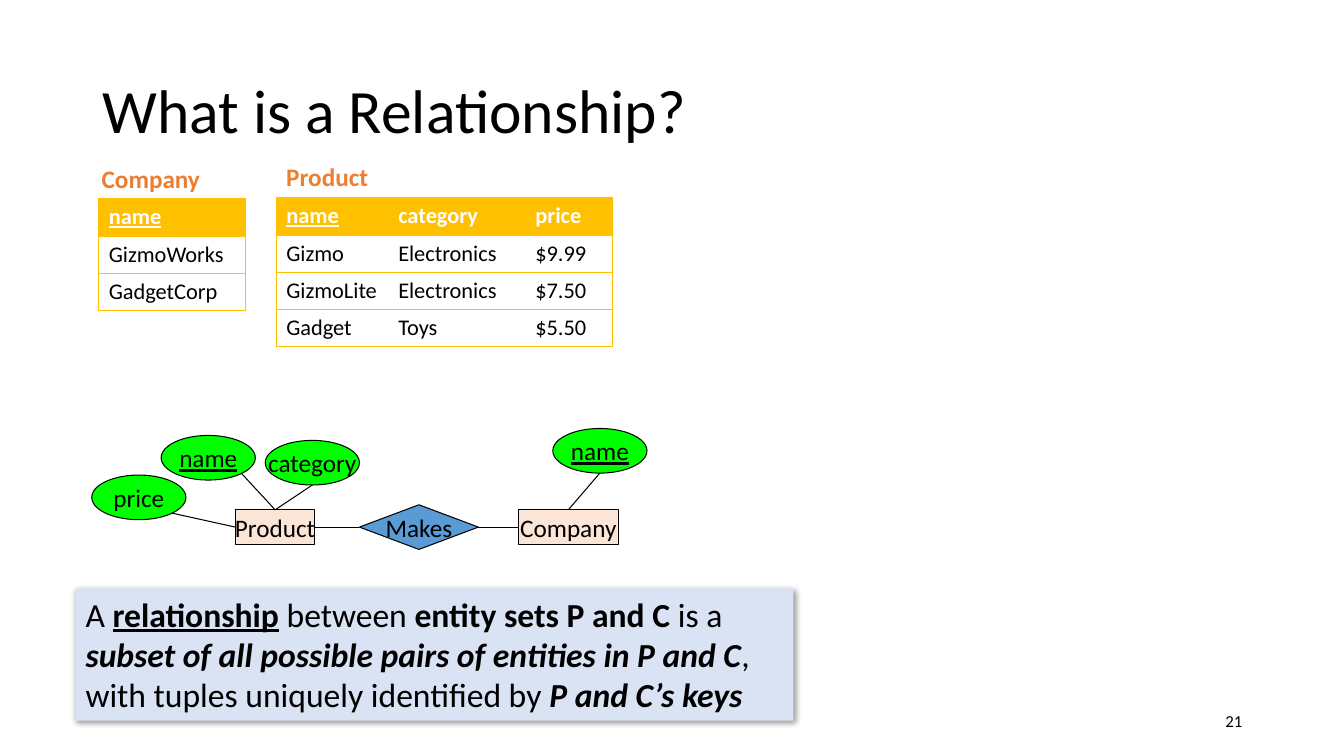
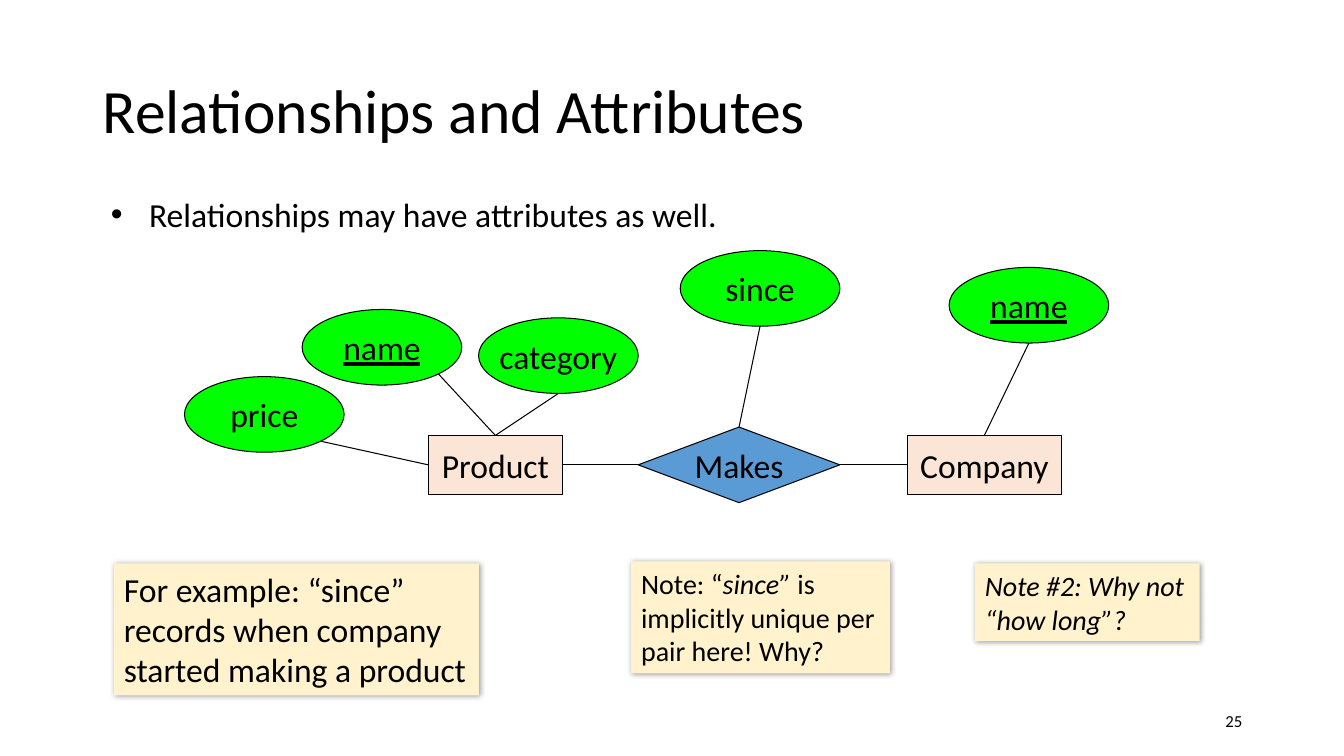
from lxml import etree
from pptx import Presentation
from pptx.dml.color import RGBColor
from pptx.enum.shapes import MSO_CONNECTOR, MSO_SHAPE
from pptx.enum.text import MSO_ANCHOR, PP_ALIGN
from pptx.oxml.ns import qn
from pptx.util import Inches, Pt

RECT, OVAL, DIAMOND = MSO_SHAPE.RECTANGLE, MSO_SHAPE.OVAL, MSO_SHAPE.DIAMOND
STRAIGHT = MSO_CONNECTOR.STRAIGHT
LEFT, CENTER, RIGHT = PP_ALIGN.LEFT, PP_ALIGN.CENTER, PP_ALIGN.RIGHT
TOP, MIDDLE = MSO_ANCHOR.TOP, MSO_ANCHOR.MIDDLE

FONT = "Calibri"
COLORS = {
    "text": "000000", "header_text": "FFFFFF", "label": "ED7D31", "table": "FFC000",
    "attribute": "00FF00", "entity": "FBE5D6", "relation": "5B9BD5",
    "definition": "DAE3F3", "note": "FFF2CC",
}
BOLD, ITALIC, UNDERLINE = {"bold": True}, {"italic": True}, {"underline": True}
ROW_H = 0.37
# Points on a shape's box, as shares of its width and height
TOP_MID, BOTTOM_MID, LEFT_MID, RIGHT_MID = (0.5, 0), (0.5, 1), (0, 0.5), (1, 0.5)
OVAL_LOW_RIGHT = (0.854, 0.854)


def rgb(name):
    return RGBColor.from_string(COLORS[name])


def inches(*values):
    return [Inches(v) for v in values]


def write(tf, runs, size, color="text", align=LEFT, anchor=TOP, wrap=True):
    """Fill a text frame with one paragraph; runs are (text, format) pairs."""
    tf.word_wrap, tf.vertical_anchor = wrap, anchor
    p = tf.paragraphs[0]
    p.alignment = align
    for text, fmt in runs:
        r = p.add_run()
        r.text = text
        r.font.color.rgb = rgb(color)
        for key, value in {"name": FONT, "size": Pt(size), **fmt}.items():
            setattr(r.font, key, value)
    return p


def add_text(slide, box, runs, size, **style):
    return write(slide.shapes.add_textbox(*inches(*box)).text_frame, runs, size, **style)


def add_filled(slide, kind, box, fill):
    sp = slide.shapes.add_shape(kind, *inches(*box))
    sp.shadow.inherit = False
    sp.fill.solid()
    sp.fill.fore_color.rgb = rgb(fill)
    return sp


def add_note(slide, box, runs, size, fill="note"):
    """A borderless text panel with a soft shadow."""
    sp = add_filled(slide, RECT, box, fill)
    sp.line.fill.background()
    effects = sp._element.spPr.find(qn("a:effectLst"))
    shadow = etree.SubElement(effects, qn("a:outerShdw"), blurRad=str(Pt(4)),
                              dist=str(Pt(1)), dir="2700000", algn="tl", rotWithShape="0")
    color = etree.SubElement(shadow, qn("a:srgbClr"), val=COLORS["text"])
    etree.SubElement(color, qn("a:alpha"), val="40000")
    write(sp.text_frame, runs, size)


def set_borders(cell, sides):
    tc_pr = cell._tc.get_or_add_tcPr()
    for side in "LRTB":
        ln = etree.SubElement(tc_pr, qn(f"a:ln{side}"), w=str(Pt(0.5)))
        if side in sides:
            fill = etree.SubElement(ln, qn("a:solidFill"))
            etree.SubElement(fill, qn("a:srgbClr"), val=COLORS["table"])
        else:
            etree.SubElement(ln, qn("a:noFill"))


def add_data_table(slide, left, top, widths, rows):
    """A table with a filled header, whose first column is the key."""
    box = inches(left, top, sum(widths), ROW_H * len(rows))
    table = slide.shapes.add_table(len(rows), len(widths), *box).table
    table.horz_banding = False
    for col, width in zip(table.columns, widths):
        col.width = Inches(width)
    for i, row in enumerate(rows):
        table.rows[i].height = Inches(ROW_H)
        for j, text in enumerate(row):
            cell = table.cell(i, j)
            set_borders(cell, "TB" + "L" * (j == 0) + "R" * (j == len(row) - 1))
            if i == 0:
                cell.fill.solid()
                cell.fill.fore_color.rgb = rgb("table")
                fmt, color = {"bold": True, "underline": j == 0}, "header_text"
            else:
                cell.fill.background()
                fmt, color = {"bold": False}, "text"
            write(cell.text_frame, [(text, fmt)], 16, color)


def add_line(slide, start, start_share, end, end_share):
    """Join two shapes at the given shares of their boxes."""
    points = []
    for sp, (fx, fy) in ((start, start_share), (end, end_share)):
        points += [int(sp.left + fx * sp.width), int(sp.top + fy * sp.height)]
    cxn = slide.shapes.add_connector(STRAIGHT, *points)
    cxn.line.color.rgb = rgb("text")
    cxn.line.width = Pt(0.75)
    etree.SubElement(cxn._element.spPr, qn("a:effectLst"))


def add_er_diagram(slide, left, top, cell, size, company_w, company_name, since=None):
    """Place the diagram on a square grid; company_name and since are (column, row)."""
    def node(kind, text, col, row, w, h, fill, fmt=None):
        box = (left + col * cell, top + row * cell, w * cell, h * cell)
        sp = add_filled(slide, kind, box, fill)
        sp.line.color.rgb = rgb("text")
        sp.line.width = Pt(0.75)
        tf = sp.text_frame
        for side in ("left", "right", "top", "bottom"):
            setattr(tf, f"margin_{side}", 0)
        write(tf, [(text, fmt or {})], size, align=CENTER, anchor=MIDDLE, wrap=False)
        return sp

    def attribute(text, col, row, fmt=None):
        return node(OVAL, text, col, row, 19, 9, "attribute", fmt)

    makes = node(DIAMOND, "Makes", 54, 14, 24, 9, "relation")
    product = node(RECT, "Product", 29, 15, 16, 7, "entity")
    company = node(RECT, "Company", 86, 15, company_w, 7, "entity")
    links = [
        (attribute("price", 0, 8), OVAL_LOW_RIGHT, product, LEFT_MID),
        (attribute("name", 14, 0, UNDERLINE), OVAL_LOW_RIGHT, product, TOP_MID),
        (attribute("category", 35, 1), BOTTOM_MID, product, TOP_MID),
        (attribute("name", *company_name, UNDERLINE), BOTTOM_MID, company, TOP_MID),
        (product, RIGHT_MID, makes, LEFT_MID),
        (makes, RIGHT_MID, company, LEFT_MID),
    ]
    if since:
        links.append((attribute("since", *since), BOTTOM_MID, makes, TOP_MID))
    for link in links:
        add_line(slide, *link)


def add_titled_slide(prs, title, number):
    slide = prs.slides.add_slide(prs.slide_layouts[5])
    sp = slide.shapes.title
    sp.left, sp.top, sp.width, sp.height = inches(0.92, 0.4, 11.5, 1.45)
    write(sp.text_frame, [(title, {})], 44, anchor=MIDDLE).line_spacing = 0.9
    add_text(slide, (9.42, 6.95, 3, 0.4), [(number, {})], 12, align=RIGHT, anchor=MIDDLE)
    return slide


def relationship_slide(prs):
    slide = add_titled_slide(prs, "What is a Relationship?", "21")
    add_data_table(slide, 2.74, 1.96, (1.11, 1.36, 0.86), [
        ("name", "category", "price"),
        ("Gizmo", "Electronics", "$9.99"),
        ("GizmoLite", "Electronics", "$7.50"),
        ("Gadget", "Toys", "$5.50"),
    ])
    add_data_table(slide, 0.98, 1.97, (1.45,), [("name",), ("GizmoWorks",), ("GadgetCorp",)])
    for text, box in (("Product", (2.74, 1.55, 1.02, 0.4)),
                      ("Company", (0.91, 1.57, 1.18, 0.4))):
        add_text(slide, box, [(text, BOLD)], 18, color="label", wrap=False)
    add_er_diagram(slide, 0.91, 4.32, 0.59 / 12, 18, company_w=20.3, company_name=(93, -1.4))
    add_note(slide, (0.75, 5.84, 7.12, 1.31), [
        ("A ", {}),
        ("relationship", BOLD | UNDERLINE),
        (" between ", {}),
        ("entity sets P and C ", BOLD),
        ("is a ", {}),
        ("subset of all possible pairs of entities in P and C", BOLD | ITALIC),
        (", with tuples uniquely identified by ", {}),
        ("P and C’s keys", BOLD | ITALIC),
    ], 24, fill="definition")


def attributes_slide(prs):
    slide = add_titled_slide(prs, "Relationships and Attributes", "25")
    p = add_text(slide, (1, 1.87, 6.42, 0.5),
                 [("Relationships may have attributes as well.", {})], 24)
    p_pr = p._p.get_or_add_pPr()
    indent = Inches(0.38)
    p_pr.set("marL", str(indent))
    p_pr.set("indent", str(-indent))
    etree.SubElement(p_pr, qn("a:buFont"), typeface="Arial")
    etree.SubElement(p_pr, qn("a:buChar"), char="•")
    add_er_diagram(slide, 1.83, 3.07, 1 / 12, 24, company_w=18.4,
                   company_name=(91, -5), since=(59, -7))
    add_note(slide, (1.13, 5.59, 3.62, 1.31),
             [("For example: “since” records when company started making a product", {})], 24)
    add_note(slide, (6.26, 5.57, 2.57, 1.11), [
        ("Note: “", {}),
        ("since” ", ITALIC),
        ("is implicitly unique per pair here! Why?", {}),
    ], 20)
    add_note(slide, (9.67, 5.59, 2.23, 0.77), [("Note #2: Why not “how long”?", ITALIC)], 20)


def main():
    prs = Presentation()
    prs.slide_width, prs.slide_height = inches(13.33, 7.5)
    relationship_slide(prs)
    attributes_slide(prs)
    prs.save("out.pptx")


if __name__ == "__main__":
    main()
